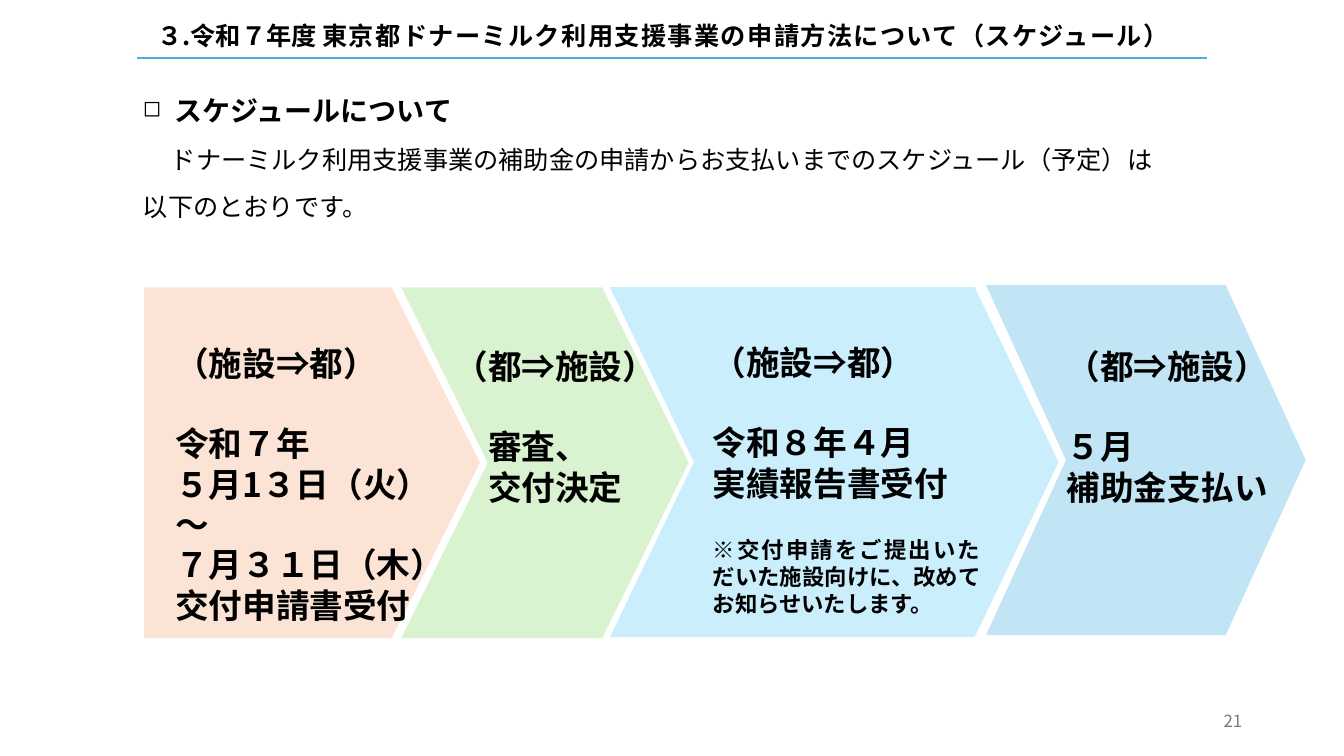
from dataclasses import dataclass

from lxml import etree
from pptx import Presentation
from pptx.dml.color import RGBColor
from pptx.enum.shapes import MSO_CONNECTOR, MSO_SHAPE
from pptx.enum.text import MSO_ANCHOR, PP_ALIGN
from pptx.oxml.ns import qn
from pptx.util import Inches, Pt

LEFT, RIGHT, JUST = PP_ALIGN.LEFT, PP_ALIGN.RIGHT, PP_ALIGN.JUSTIFY
TOP, MIDDLE = MSO_ANCHOR.TOP, MSO_ANCHOR.MIDDLE
PENTA, CHEV, RECT = MSO_SHAPE.PENTAGON, MSO_SHAPE.CHEVRON, MSO_SHAPE.RECTANGLE
STRAIGHT = MSO_CONNECTOR.STRAIGHT
WIDE, HIGH = Inches(13.33), Inches(7.5)


@dataclass(frozen=True)
class Theme:
    font: str = "Noto Sans CJK JP"
    ink: str = "000000"
    gray: str = "797979"
    rule: str = "46B1E1"
    paper: str = "FFFFFF"
    peach: str = "FBE3D6"
    green: str = "D9F2D0"
    sky: str = "CAEEFB"
    blue: str = "C1E5F5"
    step: int = 24
    head: int = 20
    body: int = 18
    note: int = 16
    page: int = 12


T = Theme()

STEPS = [
    (PENTA, T.peach, 0.263, (10.73, 38, 24.98, 46.4), (12.3, 44.67, 23.86, 33.6),
     "（施設⇒都）", ["令和７年", "５月1３日（火）", "～", "７月３１日（木）", "交付申請書受付"], 0, ""),
    (CHEV, T.green, 0.301, (29.86, 38, 21.38, 46.4), (33.08, 45.07, 16.88, 11.33),
     "（都⇒施設）", ["審査、", "交付決定"], T.step, ""),
    (CHEV, T.blue, 0.25, (73.37, 37.73, 23.78, 46.27), (78.62, 45.07, 19.73, 16.13),
     "（都⇒施設）", ["５月", "補助金支払い"], 0, ""),
    (CHEV, T.sky, 0.24, (45.39, 38, 33.38, 46.27), (52.29, 44.53, 21.38, 38.13),
     "（施設⇒都）", ["令和８年４月", "実績報告書受付"], 0,
     "※交付申請をご提出いただいた施設向けに、改めてお知らせいたします。"),
]


def share(x, y, w, h):
    return [int(full * part / 100) for full, part in zip((WIDE, HIGH) * 2, (x, y, w, h))]


def style(run, size, bold=True, color=T.ink):
    run.font.size, run.font.bold, run.font.name = Pt(size), bold, T.font
    run.font.color.rgb = RGBColor.from_string(color)
    east = etree.SubElement(run.font._element, qn("a:ea"))
    east.set("typeface", T.font)


def write(frame, rows, align=LEFT, anchor=TOP):
    frame.word_wrap, frame.vertical_anchor = True, anchor
    frame.text = "\n".join(row[0] for row in rows)
    for para, (_, *look) in zip(frame.paragraphs, rows):
        para.alignment = align
        for run in para.runs:
            style(run, *look)
    return frame.paragraphs


def label(slide, box, rows, align=LEFT, anchor=TOP):
    return write(slide.shapes.add_textbox(*share(*box)).text_frame, rows, align, anchor)


def block(slide, kind, box, color):
    shape = slide.shapes.add_shape(kind, *share(*box))
    shape.shadow.inherit = False
    shape.fill.solid()
    shape.fill.fore_color.rgb = RGBColor.from_string(color)
    shape.line.fill.background()
    return shape


def title(slide):
    shape = slide.shapes.title
    shape.left, shape.top, shape.width, shape.height = share(10.95, 2, 86.2, 10)
    rows = [("３.令和７年度 ", T.body)]
    para = write(shape.text_frame, rows)[0]
    para.space_after = Pt(3)
    run = para.add_run()
    run.text = "東京都ドナーミルク利用支援事業の申請方法について（スケジュール）"
    style(run, T.body)
    run.font._element.set("spc", "100")


def rule(slide):
    x, y, w, _ = share(10.2, 7.73, 79.6, 0)
    line = slide.shapes.add_connector(STRAIGHT, x, y, x + w, y)
    line.line.color.rgb = RGBColor.from_string(T.rule)
    line.line.width = Pt(1.5)
    etree.SubElement(line._element.spPr, qn("a:effectLst"))


def indent(para, left, first):
    props = para._p.get_or_add_pPr()
    props.set("marL", str(Pt(left)))
    props.set("indent", str(Pt(first)))
    return props


def intro(slide):
    shape = block(slide, RECT, (9.9, 11.73, 86.2, 79.73), T.paper)
    rows = [
        ("スケジュールについて", T.head),
        ("ドナーミルク利用支援事業の補助金の申請からお支払いまでのスケジュール（予定）は", T.body, False),
        ("以下のとおりです。", T.body, False),
    ]
    paras = write(shape.text_frame, rows)
    for para in paras:
        para.space_before = Pt(12)
    props = indent(paras[0], 22.5, -22.5)
    etree.SubElement(props, qn("a:buSzPct")).set("val", "80000")
    etree.SubElement(props, qn("a:buChar")).set("char", "◻")
    indent(paras[1], 0, T.head)


def step(slide, box, head, lines, inset, note):
    rows = [(text, T.step) for text in [head, *lines]]
    if note:
        rows.append((note, T.note))
    paras = label(slide, box, rows, JUST)
    paras[0].space_after = Pt(T.step * 1.2)
    for para in paras[1:]:
        indent(para, inset, 0)
    if note:
        paras[-1].space_before = Pt(T.head * 1.2)


def main():
    deck = Presentation()
    deck.slide_width, deck.slide_height = WIDE, HIGH
    slide = deck.slides.add_slide(deck.slide_layouts[5])
    title(slide)
    rule(slide)
    label(slide, (70.67, 92.67, 22.5, 5.33), [("21", T.page, False, T.gray)], RIGHT, MIDDLE)
    intro(slide)
    for kind, color, bend, area, *_ in STEPS:
        block(slide, kind, area, color).adjustments[0] = bend
    for _, _, _, _, *words in STEPS:
        step(slide, *words)
    deck.save("out.pptx")


if __name__ == "__main__":
    main()
